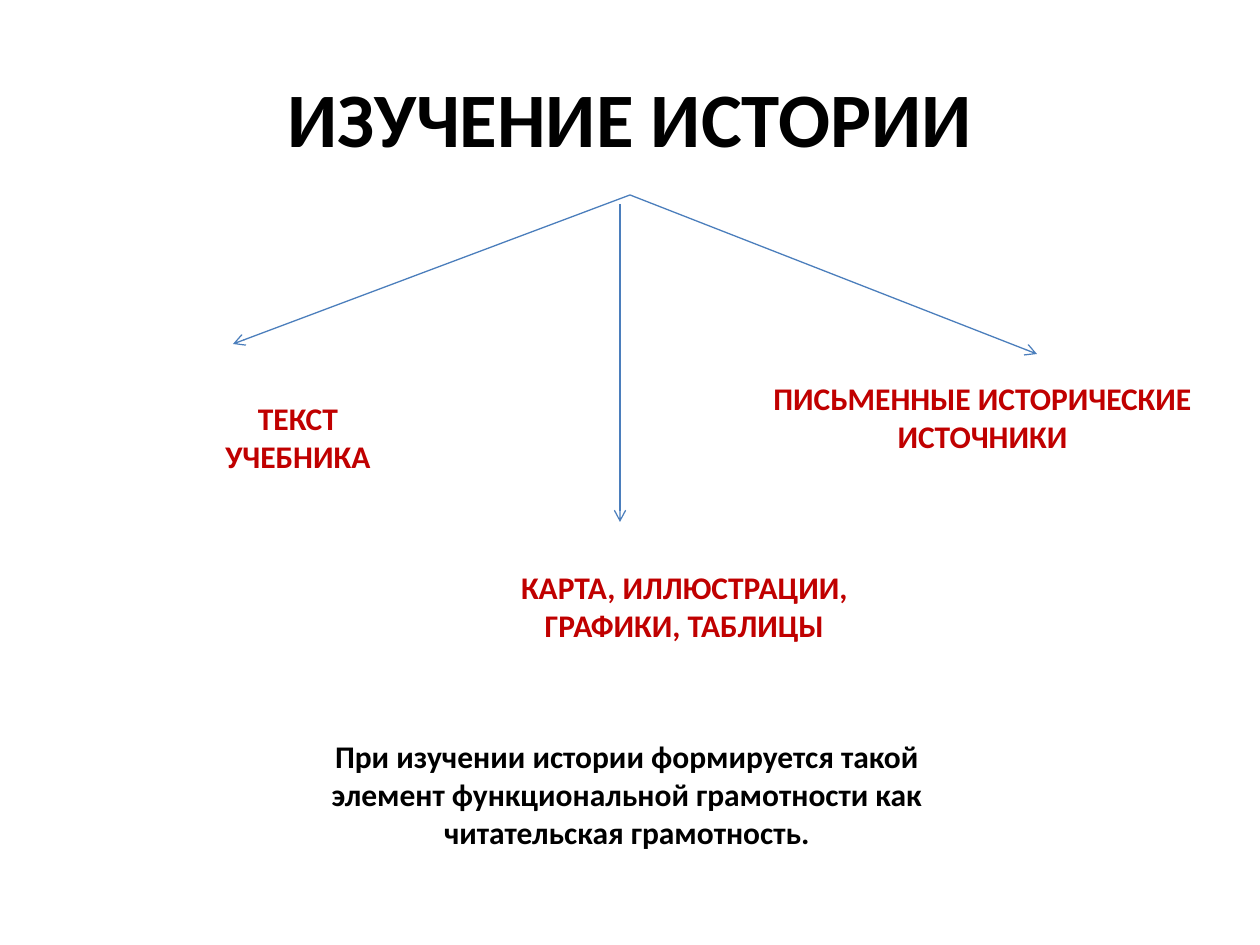
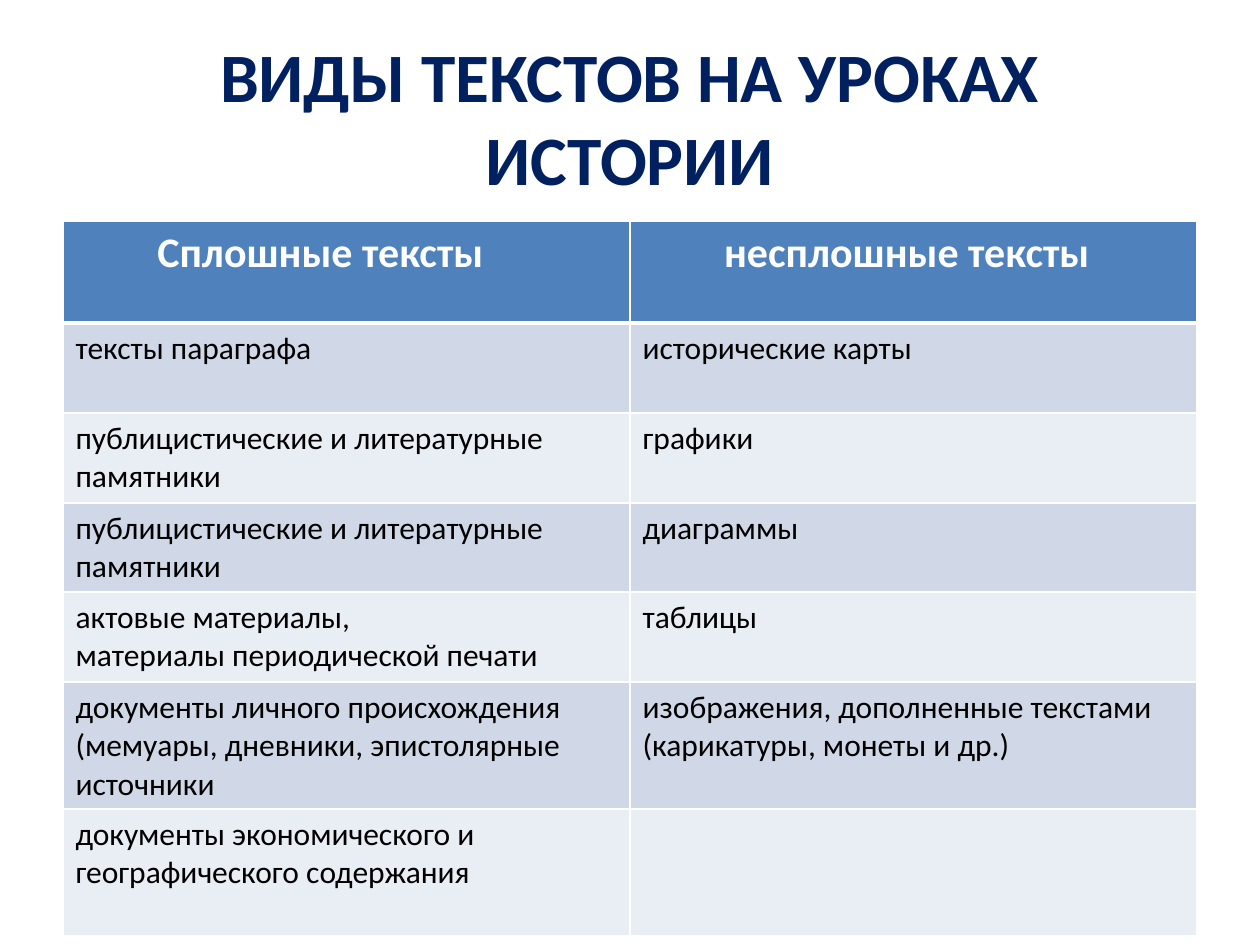
import pptx
import pptx.util
import pptx.dml.color
import pptx.enum.shapes
import pptx.enum.text
import pptx.oxml.ns
import lxml.etree

RGBColor = pptx.dml.color.RGBColor
BLACK = RGBColor(0x00, 0x00, 0x00)
WHITE = RGBColor(0xFF, 0xFF, 0xFF)
NAVY = RGBColor(0x00, 0x20, 0x60)
RED = RGBColor(0xC0, 0x00, 0x00)
ARROW_BLUE = RGBColor(0x4B, 0x7E, 0xBC)
HEADER_BLUE = RGBColor(0x4F, 0x81, 0xBD)
BANDS = (RGBColor(0xD0, 0xD8, 0xE8), RGBColor(0xE9, 0xED, 0xF4))

FONT = "Calibri"
PX_PER_INCH = 126
SLIDE_SIZE = (1260, 945)
TITLE_BOX = (63, 38, 1134, 157)
DIAGRAM_BOX = (184, 195, 1022, 663)
TABLE_BOX = (63, 221, 1134, 715)

ARROWS = [
    ((446, 0), (49, 149)),
    ((446, 0), (853, 159)),
    ((436, 9), (436, 327)),
]
LABELS = [
    ((575, 178, 447, 89), ["ПИСЬМЕННЫЕ ИСТОРИЧЕСКИЕ", "ИСТОЧНИКИ"], False, RED),
    ((323, 367, 355, 89), ["КАРТА, ИЛЛЮСТРАЦИИ,", "ГРАФИКИ, ТАБЛИЦЫ"], False, RED),
    ((0, 198, 228, 89), ["ТЕКСТ УЧЕБНИКА"], True, RED),
    ((128, 536, 630, 127),
     ["При изучении истории формируется такой элемент функциональной "
      "грамотности как читательская грамотность."], True, BLACK),
]
HEADINGS = [("Сплошные тексты", 65), ("несплошные тексты", 26)]
MONUMENTS = ["публицистические и литературные", "памятники"]
TEXT_KINDS = [
    (["тексты параграфа"], ["исторические карты"]),
    (MONUMENTS, ["графики"]),
    (MONUMENTS, ["диаграммы"]),
    (["актовые материалы,", "материалы периодической печати"], ["таблицы"]),
    (["документы личного происхождения (мемуары, дневники, эпистолярные источники"],
     ["изображения, дополненные текстами (карикатуры, монеты и др.)"]),
    (["документы экономического и географического содержания"], []),
]
ROW_HEIGHTS = [102, 90, 90, 89, 90, 127, 127]


def px(length):
    """Turn pixels into EMU."""
    return pptx.util.Emu(round(length * 914400 / PX_PER_INCH))


def apply(target, formats):
    """Set every attribute named in a dict of format values."""
    for name, value in formats.items():
        setattr(target, name, value)


def write(frame, lines, size, color, bold=True, align="CENTER"):
    """Fill a text frame with one paragraph per line."""
    for index, line in enumerate(lines):
        para = frame.add_paragraph() if index else frame.paragraphs[0]
        para.alignment = getattr(pptx.enum.text.PP_ALIGN, align)
        span = para.add_run()
        span.text = line
        apply(span.font, {"name": FONT, "size": pptx.util.Pt(size), "bold": bold})
        span.font.color.rgb = color


def add_text(page, box, lines, size, color, **formats):
    """Add a centred bold text box."""
    frame = page.shapes.add_textbox(*map(px, box)).text_frame
    apply(frame, {"word_wrap": True, **formats})
    write(frame, lines, size, color)


def add_title(page, box, title, size, color):
    """Add the slide title, centred in its box."""
    add_text(page, box, [title], size, color,
             vertical_anchor=pptx.enum.text.MSO_ANCHOR.MIDDLE)


def add_arrow(page, start, end):
    """Add a thin straight arrow without a shadow."""
    arrow = page.shapes.add_connector(
        pptx.enum.shapes.MSO_CONNECTOR.STRAIGHT, *map(px, start + end))
    arrow.line.width = pptx.util.Pt(0.75)
    arrow.line.color.rgb = ARROW_BLUE
    properties = arrow.element.spPr
    outline = properties.find(pptx.oxml.ns.qn("a:ln"))
    lxml.etree.SubElement(outline, pptx.oxml.ns.qn("a:tailEnd"), type="arrow")
    lxml.etree.SubElement(properties, pptx.oxml.ns.qn("a:effectLst"))


def add_diagram(page, box):
    """Add the arrows, the three kinds of sources and the conclusion."""
    left, top = box[:2]
    for ends in ARROWS:
        add_arrow(page, *((left + x, top + y) for x, y in ends))
    for (x, y, width, height), lines, wrap, color in LABELS:
        add_text(page, (left + x, top + y, width, height), lines, 18, color,
                 word_wrap=wrap,
                 auto_size=pptx.enum.text.MSO_AUTO_SIZE.SHAPE_TO_FIT_TEXT)


def style_cell(cell, fill, top_width, bottom_width):
    """Give a cell white borders and a solid fill."""
    properties = cell._tc.get_or_add_tcPr()
    for side, width in (("L", 1), ("R", 1), ("T", top_width), ("B", bottom_width)):
        border = lxml.etree.SubElement(
            properties, pptx.oxml.ns.qn("a:ln" + side), w=str(pptx.util.Pt(width)))
        solid = lxml.etree.SubElement(border, pptx.oxml.ns.qn("a:solidFill"))
        lxml.etree.SubElement(solid, pptx.oxml.ns.qn("a:srgbClr"), val=str(WHITE))
    cell.fill.solid()
    cell.fill.fore_color.rgb = fill


def add_text_table(page, box):
    """Add the two-column table of text kinds."""
    table = page.shapes.add_table(len(ROW_HEIGHTS), len(HEADINGS), *map(px, box)).table
    table.horz_banding = False
    for row, height in zip(table.rows, ROW_HEIGHTS):
        row.height = px(height)
    for column, (heading, right_margin) in enumerate(HEADINGS):
        table.columns[column].width = px(box[2] // len(HEADINGS))
        cell = table.cell(0, column)
        style_cell(cell, HEADER_BLUE, 1, 3)
        cell.margin_right = px(right_margin)
        write(cell.text_frame, [heading], 24, WHITE)
        for index, kinds in enumerate(TEXT_KINDS):
            cell = table.cell(index + 1, column)
            style_cell(cell, BANDS[index % 2], 1 if index else 3, 1)
            write(cell.text_frame, kinds[column], 18, BLACK, False, "LEFT")


def build_study_slide(page):
    """Build the slide on the study of history."""
    add_title(page, TITLE_BOX, "ИЗУЧЕНИЕ ИСТОРИИ", 44, BLACK)
    add_diagram(page, DIAGRAM_BOX)


def build_texts_slide(page):
    """Build the slide on the kinds of texts."""
    add_title(page, TITLE_BOX, "ВИДЫ ТЕКСТОВ НА УРОКАХ ИСТОРИИ", 39.6, NAVY)
    add_text_table(page, TABLE_BOX)


def main():
    """Build and save the deck."""
    deck = pptx.Presentation()
    deck.slide_width, deck.slide_height = map(px, SLIDE_SIZE)
    for build in (build_study_slide, build_texts_slide):
        build(deck.slides.add_slide(deck.slide_layouts[6]))
    deck.save("out.pptx")


if __name__ == "__main__":
    main()
